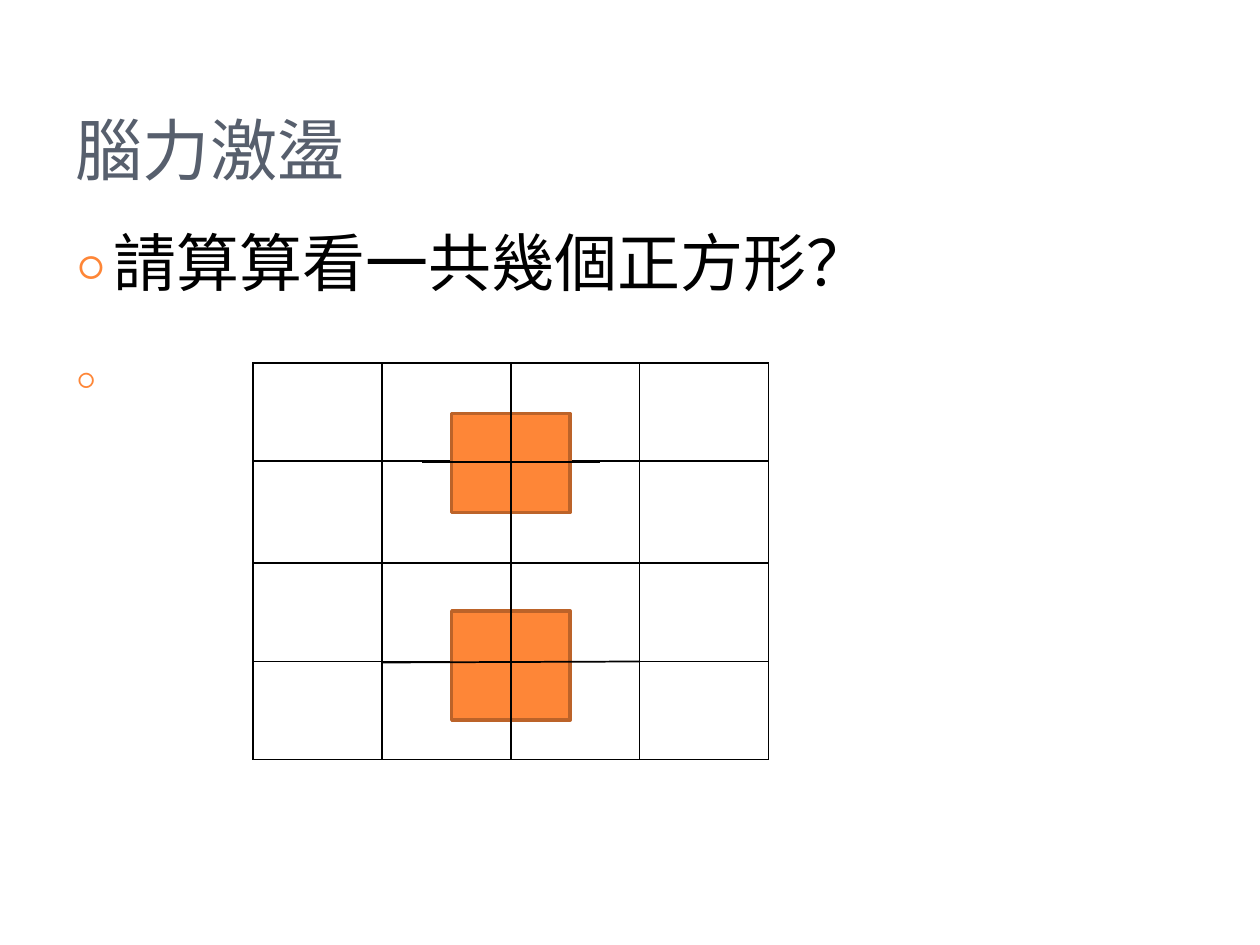
from typing import NamedTuple

import pptx
import pptx.dml.color
import pptx.enum.shapes
import pptx.enum.text
import pptx.oxml
import pptx.oxml.ns
import pptx.util

SANS, SERIF = "Noto Sans CJK SC", "TeX Gyre Schola"
BLACK, WHITE, ORANGE, BROWN, SLATE = "000000", "FFFFFF", "FE8637", "BC6329", "575F6D"
SLIDE_W, SLIDE_H = 10, 7.5
GRID_LEFT, GRID_TOP = 2.01, 2.88
COL_W, ROW_H = 4.09 / 4, 3.15 / 4
ROW_HEIGHTS = (0.78, 0.81, 0.78, 0.78)


class Square(NamedTuple):
    """A filled square placed in grid columns and rows."""
    col: float
    row: float
    cols: float
    rows: float


class Line(NamedTuple):
    """A straight line between two points of the grid."""
    col1: float
    row1: float
    col2: float
    row2: float


SQUARES = [Square(1.54, 0.51, 0.92, 1), Square(1.54, 2.5, 0.92, 1.1)]
LINES = [Line(2, 0.2, 2, 3.9), Line(1.31, 1, 2.69, 1), Line(1, 3.02, 3, 3.01)]


def rgb(value: str):
    """Turn a hex string into a colour."""
    return pptx.dml.color.RGBColor.from_string(value)


def x(col: float):
    """Give the horizontal place of a grid column."""
    return pptx.util.Inches(GRID_LEFT + col * COL_W)


def y(row: float):
    """Give the vertical place of a grid row."""
    return pptx.util.Inches(GRID_TOP + row * ROW_H)


def element(xml: str):
    """Parse one drawing element given without its namespace."""
    head, tail = xml.split(" ", 1)
    return pptx.oxml.parse_xml(f"{head} {pptx.oxml.ns.nsdecls('a')} {tail}")


def place(sp, left: float, top: float, width: float, height: float):
    """Move a placeholder to shares of the slide's size."""
    sp.left, sp.width = (pptx.util.Inches(v * SLIDE_W) for v in (left, width))
    sp.top, sp.height = (pptx.util.Inches(v * SLIDE_H) for v in (top, height))
    sp.text_frame.auto_size = pptx.enum.text.MSO_AUTO_SIZE.NONE
    sp.text_frame.word_wrap = True


def write(p, text: str, *, size: float, font: str = SANS, color: str = BLACK,
          before: float = 0, small_caps: bool = False, bullet: str = ""):
    """Write formatted text into a paragraph."""
    p.alignment = pptx.enum.text.PP_ALIGN.LEFT
    p.space_before = pptx.util.Pt(before)
    r = p.add_run()
    r.text = text
    r.font.size, r.font.name = pptx.util.Pt(size), font
    r.font.color.rgb = rgb(color)
    rpr = r.font._element
    rpr.find(pptx.oxml.ns.qn("a:latin")).addnext(element(f'<a:ea typeface="{font}"/>'))
    if small_caps:
        rpr.set("cap", "small")
    if bullet:
        ppr = p._p.get_or_add_pPr()
        indent = pptx.util.Inches(0.3)
        ppr.set("marL", str(indent))
        ppr.set("indent", str(-indent))
        for xml in (f'<a:buClr ><a:srgbClr val="{ORANGE}"/></a:buClr>',
                    '<a:buSzPct val="70000"/>',
                    f'<a:buFont typeface="{SERIF}"/>',
                    f'<a:buChar char="{bullet}"/>'):
            ppr.append(element(xml.replace("<a:buClr >", "<a:buClr  >")
                               if xml.startswith("<a:buClr") else xml))


def draw_table(s):
    """Draw the four by four table with black borders."""
    table = s.shapes.add_table(4, 4, x(0), y(0), x(4) - x(0), y(4) - y(0)).table
    table.first_row = table.horz_banding = False
    for row, height in zip(table.rows, ROW_HEIGHTS):
        row.height = pptx.util.Inches(height)
    for cell in table.iter_cells():
        cell.fill.solid()
        cell.fill.fore_color.rgb = rgb(WHITE)
        tcpr = cell._tc.get_or_add_tcPr()
        for i, side in enumerate("LRTB"):
            tcpr.insert(i, element(
                f'<a:ln{side} w="{pptx.util.Pt(1)}"><a:solidFill>'
                f'<a:srgbClr val="{BLACK}"/></a:solidFill></a:ln{side}>'))


def draw_square(s, q: Square):
    """Draw one orange square."""
    sp = s.shapes.add_shape(pptx.enum.shapes.MSO_SHAPE.RECTANGLE, x(q.col), y(q.row),
                            x(q.cols) - x(0), y(q.rows) - y(0))
    sp.shadow.inherit = False
    sp.fill.solid()
    sp.fill.fore_color.rgb = rgb(ORANGE)
    sp.line.color.rgb = rgb(BROWN)
    sp.line.width = pptx.util.Pt(2)


def draw_line(s, n: Line):
    """Draw one black line without a shadow."""
    line = s.shapes.add_connector(pptx.enum.shapes.MSO_CONNECTOR.STRAIGHT,
                                  x(n.col1), y(n.row1), x(n.col2), y(n.row2))
    line.line.color.rgb = rgb(BLACK)
    line.line.width = pptx.util.Pt(1)
    line._element.spPr.append(element("<a:effectLst />"))


def main():
    """Build and save the slide."""
    prs = pptx.Presentation()
    prs.slide_width, prs.slide_height = pptx.util.Inches(SLIDE_W), pptx.util.Inches(SLIDE_H)
    s = prs.slides.add_slide(prs.slide_layouts[1])
    title, body = s.shapes.title, s.placeholders[1]
    place(title, 0.05, 0.04, 0.82, 0.17)
    title.text_frame.vertical_anchor = pptx.enum.text.MSO_ANCHOR.BOTTOM
    write(title.text_frame.paragraphs[0], "腦力激盪", size=48, color=SLATE, small_caps=True)
    place(body, 0.05, 0.23, 0.82, 0.71)
    tf = body.text_frame
    write(tf.paragraphs[0], "請算算看一共幾個正方形？", size=36, before=6, bullet="○")
    write(tf.add_paragraph(), " ", size=24, font=SERIF, before=30, bullet="○")
    draw_table(s)
    for square in SQUARES:
        draw_square(s, square)
    for line in LINES:
        draw_line(s, line)
    prs.save("out.pptx")


if __name__ == "__main__":
    main()
